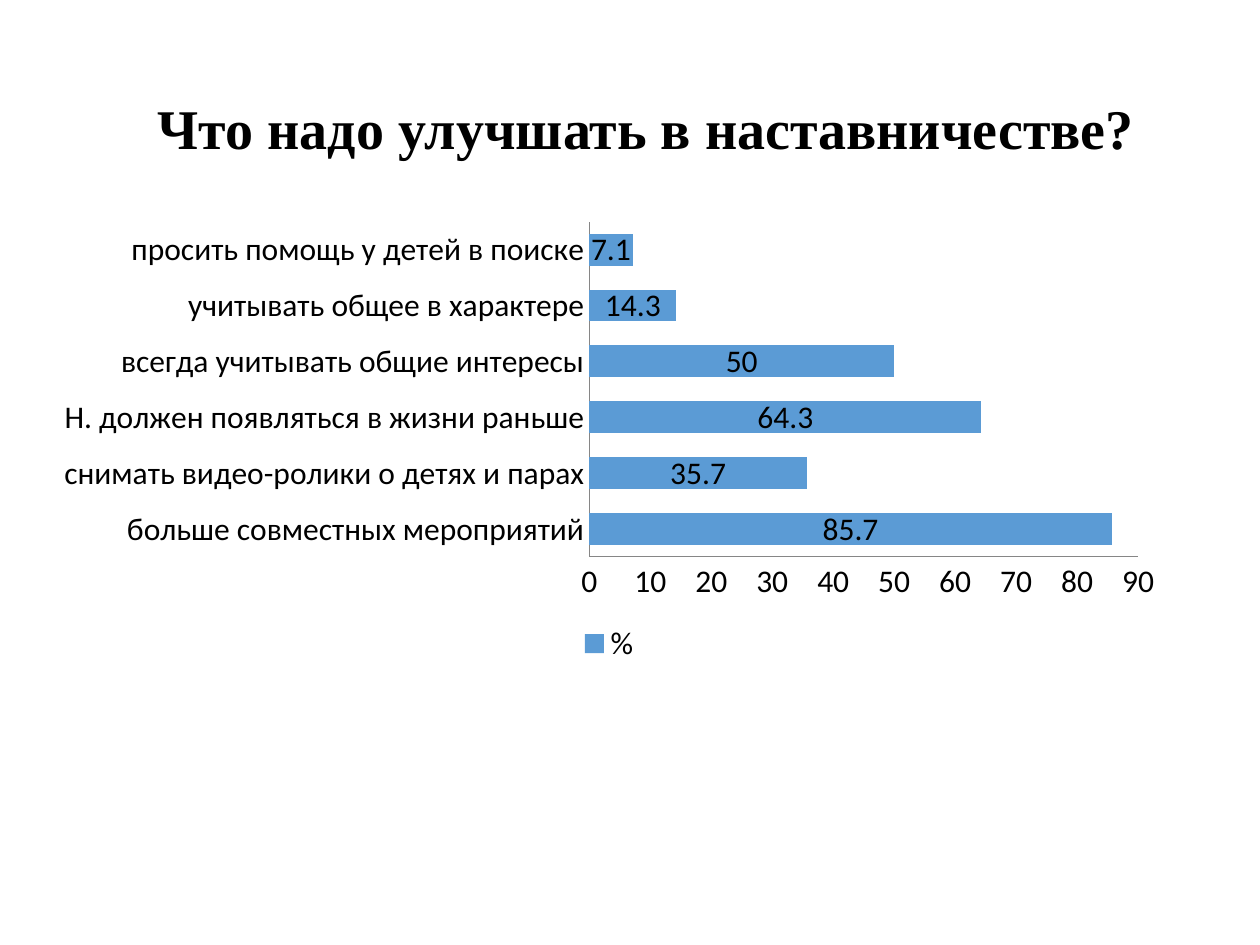
from typing import NamedTuple

import pptx
import pptx.chart.data
import pptx.dml.color
import pptx.enum.chart
import pptx.enum.text
import pptx.util

WIDTH, HEIGHT = 10, 7.5
BLACK, BLUE, GREY = "000000", "5B9BD5", "868686"


class Area(NamedTuple):
    """Place on the slide, as shares of its width and height."""
    left: float
    top: float
    width: float
    height: float

    def lengths(self) -> list[int]:
        sides = (WIDTH, HEIGHT, WIDTH, HEIGHT)
        return [pptx.util.Inches(share * side) for share, side in zip(self, sides)]


class Answer(NamedTuple):
    label: str
    percent: float


TITLE_AREA = Area(0.066, 0.092, 0.894, 0.085)
CHART_AREA = Area(0.033, 0.225, 0.901, 0.483)
ANSWERS = [
    Answer("больше совместных мероприятий", 85.7),
    Answer("снимать видео-ролики о детях и парах", 35.7),
    Answer("Н. должен появляться в жизни раньше", 64.3),
    Answer("всегда учитывать общие интересы", 50),
    Answer("учитывать общее в характере", 14.3),
    Answer("просить помощь у детей в поиске", 7.1),
]


def color(code: str) -> pptx.dml.color.RGBColor:
    return pptx.dml.color.RGBColor.from_string(code)


def set_font(font, name: str, size: float, bold: bool = False) -> None:
    font.name, font.size, font.bold = name, pptx.util.Pt(size), bold
    font.color.rgb = color(BLACK)


def write_title(page, text: str) -> None:
    title = page.shapes.title
    title.left, title.top, title.width, title.height = TITLE_AREA.lengths()
    frame = title.text_frame
    frame.text = text
    frame.word_wrap = True
    frame.auto_size = pptx.enum.text.MSO_AUTO_SIZE.SHAPE_TO_FIT_TEXT
    frame.vertical_anchor = pptx.enum.text.MSO_ANCHOR.TOP
    para = frame.paragraphs[0]
    para.alignment = pptx.enum.text.PP_ALIGN.CENTER
    set_font(para.runs[0].font, "Times New Roman", 32, bold=True)


def style_axis(axis) -> None:
    axis.has_major_gridlines = False
    axis.major_tick_mark = pptx.enum.chart.XL_TICK_MARK.NONE
    axis.minor_tick_mark = pptx.enum.chart.XL_TICK_MARK.NONE
    axis.format.line.color.rgb = color(GREY)
    axis.format.line.width = pptx.util.Pt(0.75)


def add_answer_chart(page, answers: list[Answer]) -> None:
    data = pptx.chart.data.CategoryChartData()
    data.categories = [answer.label for answer in answers]
    data.add_series("%", [answer.percent for answer in answers])
    chart = page.shapes.add_chart(
        pptx.enum.chart.XL_CHART_TYPE.BAR_STACKED, *CHART_AREA.lengths(), data
    ).chart
    set_font(chart.font, "Calibri", 18)
    chart.has_title = False
    chart.has_legend = True
    chart.legend.position = pptx.enum.chart.XL_LEGEND_POSITION.BOTTOM
    chart.legend.include_in_layout = False

    for axis in (chart.category_axis, chart.value_axis):
        style_axis(axis)
    chart.value_axis.minimum_scale = 0
    chart.value_axis.maximum_scale = 90
    chart.value_axis.major_unit = 10

    plot = chart.plots[0]
    plot.vary_by_categories = False
    plot.gap_width, plot.overlap = 75, 100
    series = plot.series[0]
    series.format.fill.solid()
    series.format.fill.fore_color.rgb = color(BLUE)
    series.data_labels.show_value = True
    set_font(series.data_labels.font, "Calibri", 18)


def main() -> None:
    deck = pptx.Presentation()
    deck.slide_width = pptx.util.Inches(WIDTH)
    deck.slide_height = pptx.util.Inches(HEIGHT)
    page = deck.slides.add_slide(deck.slide_layouts.get_by_name("Title Only"))
    write_title(page, "Что надо улучшать в наставничестве?")
    add_answer_chart(page, ANSWERS)
    deck.save("out.pptx")


if __name__ == "__main__":
    main()
